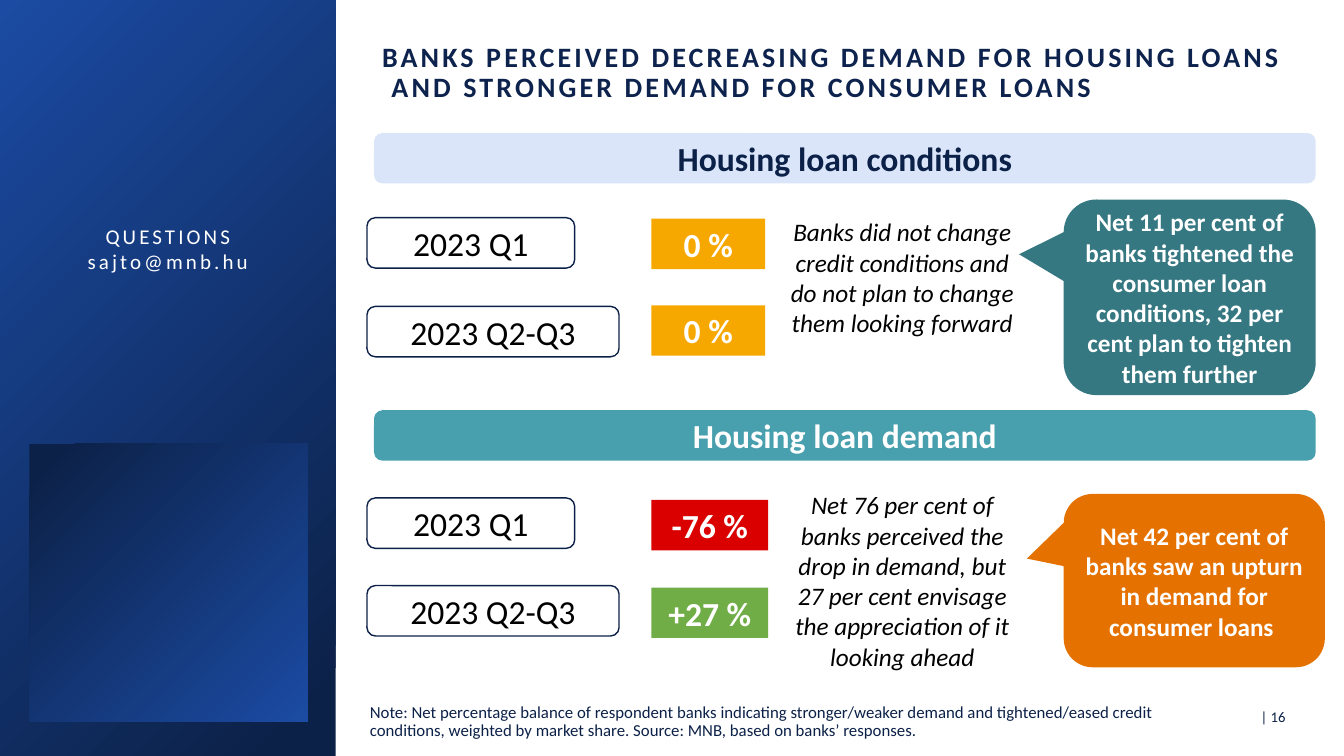
from pptx import Presentation
from pptx.dml.color import RGBColor
from pptx.enum import shapes, text
from pptx.util import Inches, Pt

NAVY = RGBColor(0x0C, 0x21, 0x48)
BLUE = RGBColor(0x1B, 0x4B, 0xA3)
INK = RGBColor(0x0D, 0x23, 0x4D)
PALE = RGBColor(0xDA, 0xE5, 0xF9)
TEAL = RGBColor(0x48, 0xA0, 0xAE)
DEEP = RGBColor(0x36, 0x78, 0x82)
AMBER = RGBColor(0xF6, 0xA8, 0x00)
ORANGE = RGBColor(0xE5, 0x72, 0x00)
GREEN = RGBColor(0x70, 0xAD, 0x47)
RED = RGBColor(0xDA, 0x00, 0x00)
WHITE = RGBColor(0xFF, 0xFF, 0xFF)
BLACK = RGBColor(0, 0, 0)

TITLE = ("BANKS PERCEIVED DECREASING DEMAND FOR HOUSING LOANS\v"
         " AND STRONGER DEMAND FOR CONSUMER LOANS")
CONTACT = "QUESTIONS\nsajto@mnb.hu"
NOTE = ("Note: Net percentage balance of respondent banks indicating "
        "stronger/weaker demand and tightened/eased credit conditions, "
        "weighted by market share. Source: MNB, based on banks’ responses.")
PAGE = "| 16 "
PERIODS = [("2023 Q1", 2.06), ("2023 Q2-Q3", 2.5)]
PARTS = [
    dict(head="Housing loan conditions", top=1.32, fill=PALE, ink=NAVY,
         tops=[2.16, 3.04], wide=1.13,
         marks=[("0 %", AMBER, 2.17), ("0 %", AMBER, 3.03)],
         say=("Banks did not change credit conditions and do not plan "
              "to change them looking forward", 2.1, 1.31),
         call=("Net 11 per cent of banks tightened the consumer loan "
               "conditions, 32 per cent plan to tighten them further"),
         box=(10.55, 1.98, 2.5, 1.94), tip=(-0.677, -0.22), tint=DEEP),
    dict(head="Housing loan demand", top=4.07, fill=TEAL, ink=WHITE,
         tops=[4.94, 5.81], wide=1.16,
         marks=[("-76 %", RED, 4.96), ("+27 %", GREEN, 5.83)],
         say=("Net 76 per cent of banks perceived the drop in demand, but "
              "27 per cent envisage the appreciation of it looking ahead",
              4.81, 1.92),
         call=("Net 42 per cent of banks saw an upturn in demand for "
               "consumer loans "),
         box=(10.55, 4.9, 2.59, 1.72), tip=(-0.641, -0.127), tint=ORANGE),
]

KIND = shapes.MSO_SHAPE
ALIGN = text.PP_ALIGN
MID = text.MSO_ANCHOR.MIDDLE
TOP = text.MSO_ANCHOR.TOP


def write(shape, words, size, ink, bold=False, italic=False,
          align=ALIGN.CENTER, anchor=MID, space=None, gap=None):
    """Put formatted text in a shape."""
    frame = shape.text_frame
    frame.text = words
    frame.word_wrap = True
    frame.auto_size = text.MSO_AUTO_SIZE.NONE
    frame.vertical_anchor = anchor
    for para in frame.paragraphs:
        para.alignment = align
        para.line_spacing = space
        for run in para.runs:
            font = run.font
            font.name, font.size = "Calibri", Pt(size)
            font.bold, font.italic = bold, italic
            font.color.rgb = ink
            if gap:
                run._r.get_or_add_rPr().set("spc", str(gap))


def draw(slide, kind, box, fill=None, line=None):
    """Add a flat shape with an optional fill and outline."""
    shape = slide.shapes.add_shape(kind, *map(Inches, box))
    shape.shadow.inherit = False
    if fill is None:
        shape.fill.background()
    else:
        shape.fill.solid()
        shape.fill.fore_color.rgb = fill
    if line is None:
        shape.line.fill.background()
    else:
        shape.line.color.rgb = line
        shape.line.width = Pt(1)
    return shape


def label(slide, box, *args, **look):
    """Add a plain text box."""
    write(slide.shapes.add_textbox(*map(Inches, box)), *args, **look)


def panel(slide, box, turn=0):
    """Add a rectangle with the navy to blue gradient."""
    shape = draw(slide, KIND.RECTANGLE, box)
    shape.fill.gradient()
    shape.fill.gradient_angle = 135
    stops = zip(shape.fill.gradient_stops, [(0.06, NAVY), (1, BLUE)])
    for stop, (place, tint) in stops:
        stop.position = place
        stop.color.rgb = tint
    shape.rotation = turn


def section(slide, part):
    """Draw one heading with its periods, values and remarks."""
    bar = draw(slide, KIND.ROUNDED_RECTANGLE, (3.71, part["top"], 9.34, 0.5),
               part["fill"])
    write(bar, part["head"], 24, part["ink"], bold=True)
    for (name, wide), top in zip(PERIODS, part["tops"]):
        pill = draw(slide, KIND.ROUNDED_RECTANGLE, (3.64, top, wide, 0.5),
                    line=NAVY)
        write(pill, name, 24, BLACK)
    for value, tint, top in part["marks"]:
        mark = draw(slide, KIND.RECTANGLE, (6.46, top, part["wide"], 0.5),
                    tint)
        write(mark, value, 24, WHITE, bold=True, anchor=TOP)
    words, top, high = part["say"]
    label(slide, (7.7, top, 2.5, high), words, 18, BLACK, italic=True,
          anchor=TOP)
    call = draw(slide, KIND.ROUNDED_RECTANGULAR_CALLOUT, part["box"],
                part["tint"])
    for i, value in enumerate((*part["tip"], 0.167)):
        call.adjustments[i] = value
    write(call, part["call"], 18, WHITE, bold=True)


def main():
    """Build the slide and save it."""
    deck = Presentation()
    deck.slide_width, deck.slide_height = Inches(13.33), Inches(7.5)
    slide = deck.slides.add_slide(deck.slide_layouts[5])
    panel(slide, (0, 0, 3.33, 7.5))
    panel(slide, (0.29, 4.4, 2.76, 2.76), 180)
    label(slide, (0.4, 2.17, 2.53, 0.61), CONTACT, 15, WHITE, anchor=TOP,
          gap=220)
    label(slide, (12.19, 6.9, 0.69, 0.41), PAGE, 10.5, NAVY,
          align=ALIGN.RIGHT)
    title = slide.shapes.title
    title.left, title.top = Inches(3.71), Inches(0.34)
    title.width, title.height = Inches(9.18), Inches(0.78)
    write(title, TITLE, 20, INK, bold=True, align=ALIGN.LEFT, space=0.9,
          gap=220)
    frame = title.text_frame
    frame.margin_left = frame.margin_right = Inches(0.08)
    frame.margin_top = frame.margin_bottom = Inches(0.04)
    for part in PARTS:
        section(slide, part)
    label(slide, (3.57, 6.91, 8.25, 0.5), NOTE, 12, NAVY, align=ALIGN.LEFT,
          space=0.9)
    deck.save("out.pptx")


if __name__ == "__main__":
    main()
